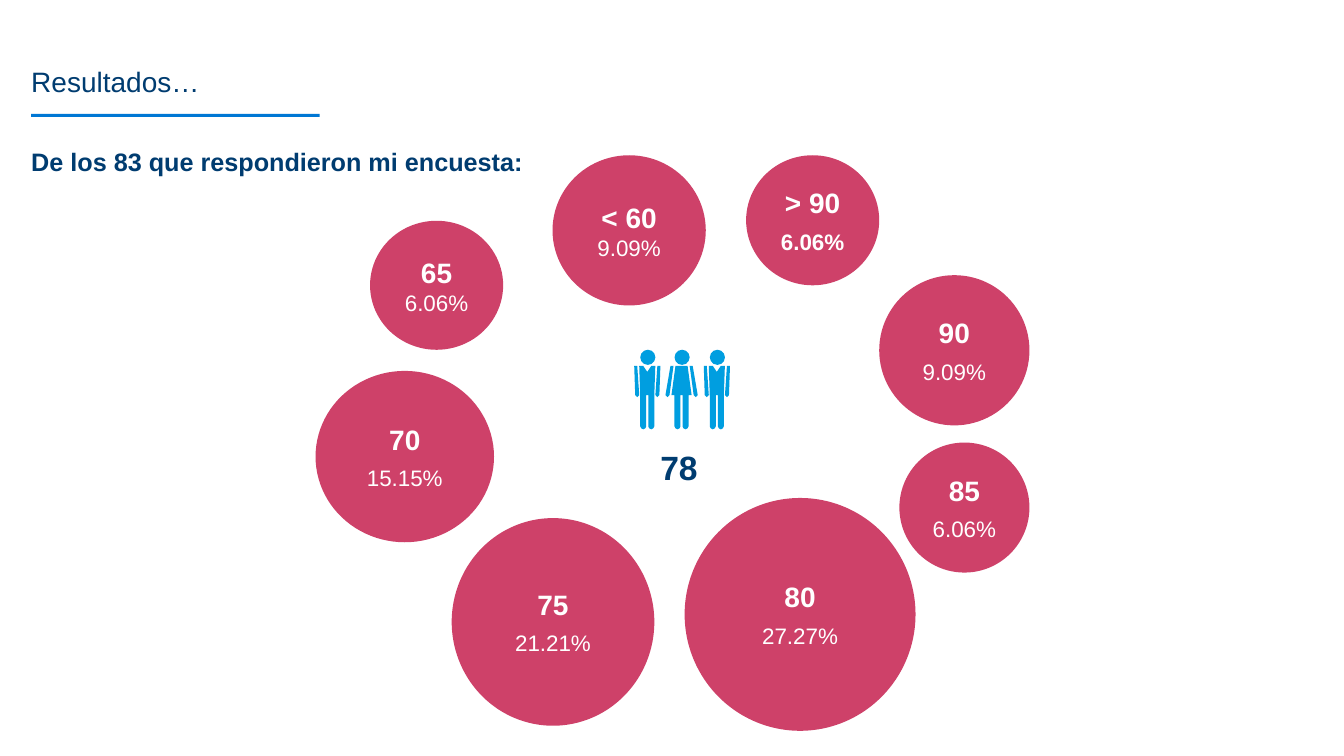
from dataclasses import dataclass

from pptx import Presentation
from pptx.dml.color import RGBColor
from pptx.enum.shapes import MSO_SHAPE
from pptx.enum.text import MSO_ANCHOR as ANCHOR, PP_ALIGN as ALIGN
from pptx.util import Inches, Pt


@dataclass
class Theme:
    font: str = "Arial"
    navy: str = "003C70"
    blue: str = "0077D4"
    sky: str = "009EE0"
    rose: str = "CE4169"
    white: str = "FFFFFF"
    title: int = 20
    heading: int = 18
    score: int = 20
    share: int = 16
    average: int = 24


theme = Theme()


def write(p, text, size, color=theme.navy, bold=False, align=ALIGN.LEFT, after=6):
    p.alignment = align
    p.space_after = Pt(after)
    r = p.add_run()
    r.text = text
    r.font.name = theme.font
    r.font.size = Pt(size)
    r.font.bold = bold
    r.font.color.rgb = RGBColor.from_string(color)


def paint(sp, color):
    sp.shadow.inherit = False
    sp.fill.solid()
    sp.fill.fore_color.rgb = RGBColor.from_string(color)
    sp.line.fill.background()


prs = Presentation()
prs.slide_width, prs.slide_height = Inches(13.33), Inches(7.5)
s = prs.slides.add_slide(prs.slide_layouts[6])

# Rule under the title
rule = s.shapes.add_shape(MSO_SHAPE.RECTANGLE, Inches(0.31), Inches(1.13), Inches(2.86), Inches(0.03))
paint(rule, theme.blue)

# People icons and the average below them
people = s.shapes.add_group_shape()

# Text: left, top, width, height, anchor, wording, format
texts = [
    (s.shapes, 0.31, 0.3, 12.7, 0.67, ANCHOR.BOTTOM, "Resultados…",
     dict(size=theme.title, after=0)),
    (s.shapes, 0.31, 1.45, 6.45, 0.47, ANCHOR.TOP, "De los 83 que respondieron mi encuesta:",
     dict(size=theme.heading, bold=True)),
    (people.shapes, 6.25, 4.43, 0.97, 0.56, ANCHOR.TOP, "78",
     dict(size=theme.average, bold=True, align=ALIGN.CENTER)),
]
for shapes, x, y, w, h, anchor, text, style in texts:
    tf = shapes.add_textbox(Inches(x), Inches(y), Inches(w), Inches(h)).text_frame
    tf.word_wrap = True
    tf.vertical_anchor = anchor
    tf.margin_left = tf.margin_right = tf.margin_top = tf.margin_bottom = 0
    write(tf.paragraphs[0], text, **style)

# Outlines of the right half of a figure, as (offset from its axis, y)
leg = [(0.07, 3.92), (0.07, 4.23), (0.06, 4.25), (0.04, 4.26), (0.02, 4.25), (0.01, 4.23), (0.01, 3.92)]
man_body = [(0, 3.69), (0.04, 3.63), (0.08, 3.63)] + leg
man_arm = [(0.1, 3.63), (0.08, 3.92), (0.09, 3.93), (0.1, 3.94), (0.11, 3.93), (0.12, 3.92), (0.13, 3.63)]
woman_body = [(0, 3.63), (0.06, 3.63), (0.1, 3.92)] + leg
woman_arm = [(0.08, 3.63), (0.12, 3.92), (0.13, 3.93), (0.14, 3.94), (0.15, 3.93), (0.16, 3.92), (0.11, 3.63)]

for axis, body, arm in [
    (6.42, man_body, man_arm),
    (6.76, woman_body, woman_arm),
    (7.11, man_body, man_arm),
]:
    head = people.shapes.add_shape(
        MSO_SHAPE.OVAL, Inches(axis - 0.07), Inches(3.47), Inches(0.15), Inches(0.15))
    paint(head, theme.sky)
    mirrored = [(-dx, y) for dx, y in reversed(body)]
    left_arm = [(-dx, y) for dx, y in arm]
    for outline in (body + mirrored, arm, left_arm):
        points = [(Inches(axis + dx), Inches(y)) for dx, y in outline]
        builder = people.shapes.build_freeform(*points[0], scale=1.0)
        builder.add_line_segments(points[1:], close=True)
        paint(builder.convert_to_shape(), theme.sky)

# Bubbles: left, top, width, height, score, share, share in bold, both in one paragraph
bubbles = [
    (3.67, 2.19, 1.32, 1.28, "65", "6.06%", False, True),
    (3.13, 3.68, 1.77, 1.7, "70", "15.15%", False, False),
    (4.48, 5.14, 2.01, 2.06, "75", "21.21%", False, False),
    (5.48, 1.54, 1.52, 1.49, "< 60", "9.09%", False, True),
    (7.4, 1.54, 1.32, 1.29, "> 90", "6.06%", True, False),
    (8.72, 2.73, 1.49, 1.49, "90", "9.09%", False, False),
    (6.79, 4.94, 2.29, 2.31, "80", "27.27%", False, False),
    (8.92, 4.39, 1.29, 1.29, "85", "6.06%", False, False),
]
for x, y, w, h, score, share, bold_share, together in bubbles:
    sp = s.shapes.add_shape(MSO_SHAPE.OVAL, Inches(x), Inches(y), Inches(w), Inches(h))
    paint(sp, theme.rose)
    tf = sp.text_frame
    tf.word_wrap = True
    tf.vertical_anchor = ANCHOR.MIDDLE
    tf.margin_left = tf.margin_right = tf.margin_top = tf.margin_bottom = Inches(0.1)
    p = tf.paragraphs[0]
    write(p, score, theme.score, theme.white, bold=True, align=ALIGN.CENTER)
    if together:
        p.add_line_break()
    else:
        p = tf.add_paragraph()
    write(p, share, theme.share, theme.white, bold=bold_share, align=ALIGN.CENTER)

prs.save("out.pptx")
